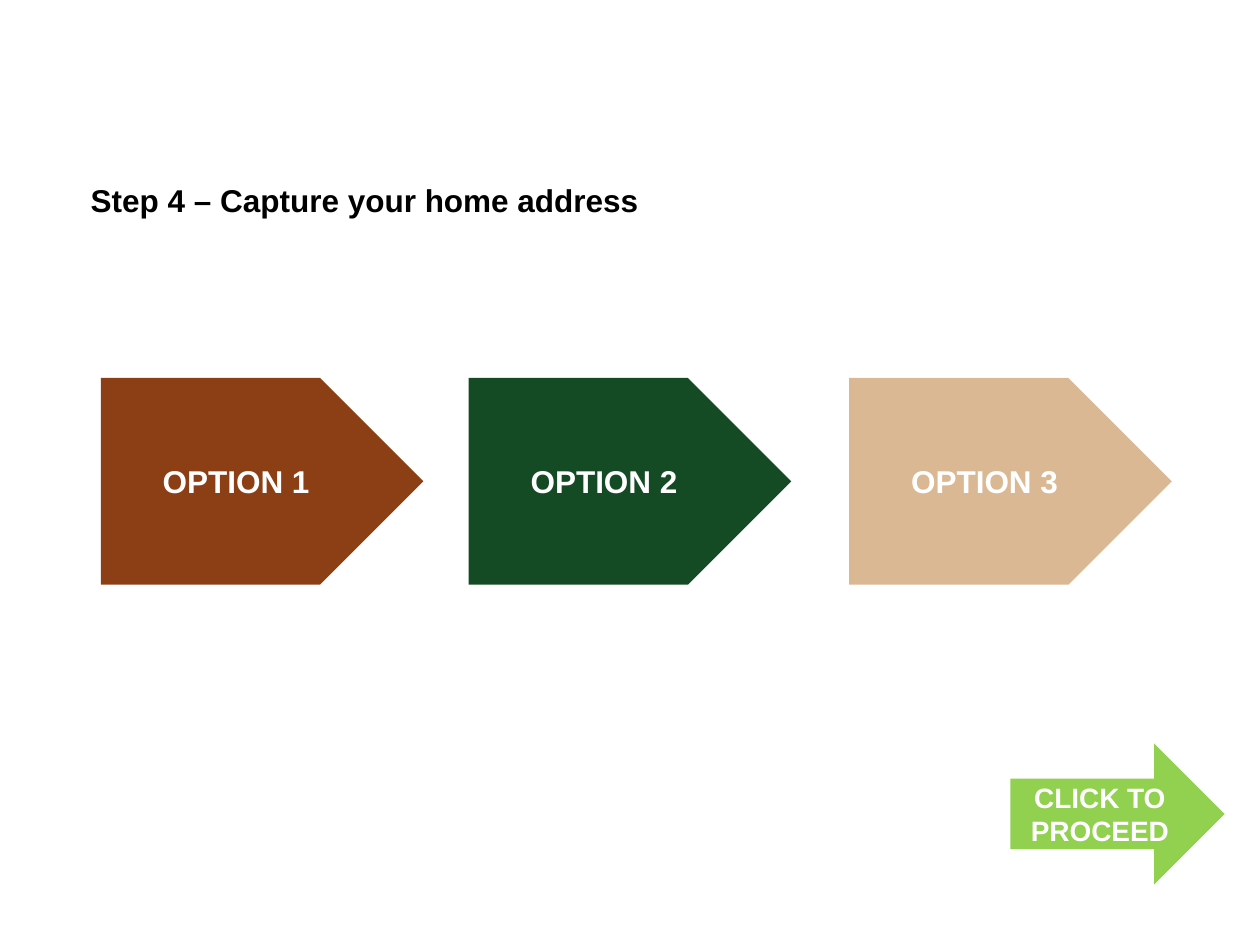
from pptx import Presentation
from pptx import util as u
from pptx.dml.color import RGBColor
from pptx.enum import shapes, text

# Content
TITLE = "Step 4 – Capture your home address"
OPTIONS = [  # label, fill, left
    ("OPTION 1", "8C3F15", 0.8),
    ("OPTION 2", "154B24", 3.72),
    ("OPTION 3", "DBB894", 6.74),
]
PROCEED = "CLICK TO PROCEED"

# Theme and layout, in inches
THEME = dict(font="Arial", dark="000000", light="FFFFFF", go="92D050", body=18, button=16)
TITLE_BOX = (0.62, 1.37, 8.93, 1.01)
OPTION_TOP, OPTION_W, OPTION_H = 3, 2.56, 1.64
BUTTON_BOX = (8.02, 5.9, 1.7, 1.12)


def write(s, content, size=THEME["body"], color=THEME["light"],
          align=text.PP_ALIGN.CENTER, anchor=text.MSO_ANCHOR.MIDDLE):
    tf = s.text_frame
    tf.word_wrap = True
    tf.auto_size = text.MSO_AUTO_SIZE.NONE
    tf.vertical_anchor = anchor
    p = tf.paragraphs[0]
    p.alignment = align
    r = p.add_run()
    r.text = content
    r.font.name = THEME["font"]
    r.font.size = u.Pt(size)
    r.font.bold = True
    r.font.color.rgb = RGBColor.from_string(color)


def add_arrow(sp, kind, box, fill, label, **fmt):
    s = sp.add_shape(kind, *map(u.Inches, box))
    s.shadow.inherit = False
    s.fill.solid()
    s.fill.fore_color.rgb = RGBColor.from_string(fill)
    s.line.fill.background()
    write(s, label, **fmt)


prs = Presentation()
prs.slide_width, prs.slide_height = u.Inches(10), u.Inches(7.5)
slide = prs.slides.add_slide(prs.slide_layouts[5])
sp = slide.shapes

# Title
title = sp.title
title.left, title.top, title.width, title.height = map(u.Inches, TITLE_BOX)
title.text_frame.margin_top = u.Inches(0.07)
write(title, TITLE, color=THEME["dark"], align=text.PP_ALIGN.LEFT,
      anchor=text.MSO_ANCHOR.TOP)

# Options
for label, fill, left in OPTIONS:
    add_arrow(sp, shapes.MSO_SHAPE.PENTAGON,
              (left, OPTION_TOP, OPTION_W, OPTION_H), fill, label)

# Proceed button
add_arrow(sp, shapes.MSO_SHAPE.RIGHT_ARROW, BUTTON_BOX, THEME["go"], PROCEED,
          size=THEME["button"])

prs.save("out.pptx")
